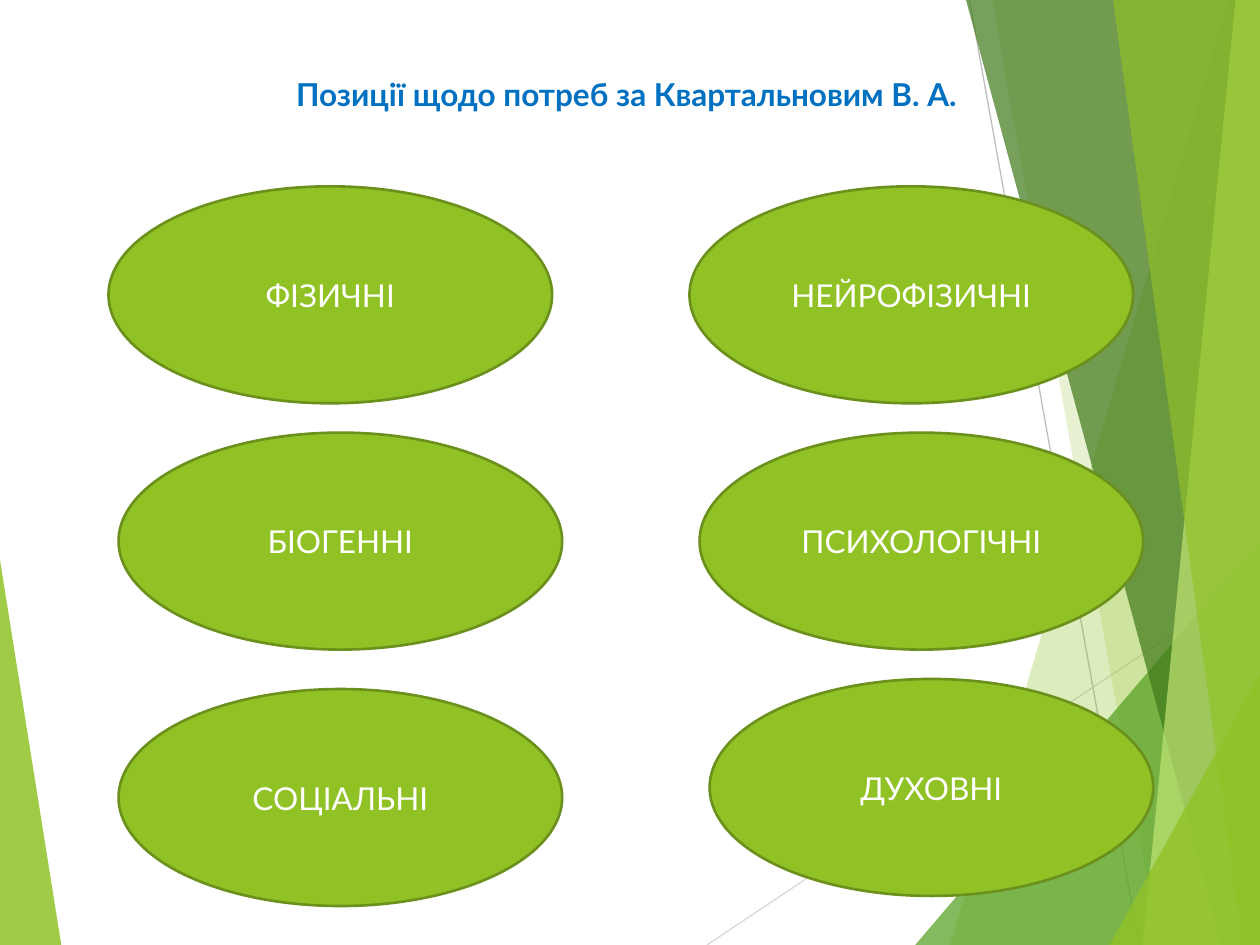
from pptx import Presentation
from pptx.dml.color import RGBColor
from pptx.enum.shapes import MSO_CONNECTOR, MSO_SHAPE
from pptx.enum.text import MSO_ANCHOR, PP_ALIGN
from pptx.oxml.ns import qn
from pptx.util import Pt
from lxml.etree import SubElement

WIDTH, HEIGHT = 720, 540
GREEN, DARK_GREEN, BLUE, WHITE = "90C226", "6B901C", "0070C0", "FFFFFF"


def color(hex_string):
    return RGBColor.from_string(hex_string)


def write_text(frame, text, hex_color, bold=False):
    frame.word_wrap = True
    frame.text = text
    paragraph = frame.paragraphs[0]
    paragraph.alignment = PP_ALIGN.CENTER
    font = paragraph.runs[0].font
    font.name, font.size, font.bold = "Lato", Pt(18), bold
    font.color.rgb = color(hex_color)


def add_facet(slide, points, hex_color, opacity):
    builder = slide.shapes.build_freeform(*points[0], scale=Pt(1))
    builder.add_line_segments(points[1:], close=True)
    facet = builder.convert_to_shape()
    facet.shadow.inherit = False
    facet.line.fill.background()
    facet.fill.solid()
    facet.fill.fore_color.rgb = color(hex_color)
    fill = facet.fill._xPr.find(qn("a:solidFill"))
    SubElement(fill[0], qn("a:alpha"), val=str(opacity * 1000))


def add_thin_line(slide, x1, y1, x2, y2, hex_color):
    line = slide.shapes.add_connector(
        MSO_CONNECTOR.STRAIGHT, Pt(x1), Pt(y1), Pt(x2), Pt(y2))
    line.line.color.rgb = color(hex_color)
    line.line.width = Pt(0.75)
    SubElement(line._element.spPr, qn("a:effectLst"))


def draw_left_wedge(slide, left, top, width, height):
    bottom = top + height
    add_facet(slide, [(left, top), (left + width, bottom), (left, bottom)], GREEN, 85)


def draw_right_wing(slide, left, top, width, height):
    right, bottom = left + width, top + height
    add_thin_line(slide, left + 4, bottom, right, top + 329, "D9D9D9")
    add_thin_line(slide, left + 154, top, left + 251, bottom, "BFBFBF")

    # Each facet runs to the right edge: upper x, upper y, lower x, colour, opacity
    facets = [
        (302, 0, 143, GREEN, 30),
        (167, 0, 262, GREEN, 20),
        (width, 309, 123, "54A021", 72),
        (152, 0, 298, "3F7819", 70),
        (306, 0, 253, "C0E474", 70),
        (236, 0, 310, GREEN, 65),
        (width, 385, 234, GREEN, 80),
    ]
    for upper_x, upper_y, lower_x, hex_color, opacity in facets:
        outline = [(left + upper_x, top + upper_y), (left + lower_x, bottom),
                   (right, bottom), (right, top + upper_y)]
        add_facet(slide, outline, hex_color, opacity)


def draw_title(slide, left, top, width, height):
    title = slide.shapes.add_textbox(Pt(left), Pt(top), Pt(width), Pt(height))
    write_text(title.text_frame, "Позиції щодо потреб за Квартальновим В. А.", BLUE, bold=True)


def draw_needs(slide, left, top, width, height):
    oval_width, oval_height = 253.5, 124
    right_column = width - oval_width
    row_step = (height - oval_height) / 2
    # Name, x and y inside the box
    needs = [
        ("ФІЗИЧНІ", 0, 0),
        ("НЕЙРОФІЗИЧНІ", right_column - 11.5, 0),
        ("БІОГЕННІ", 5.75, row_step),
        ("ДУХОВНІ", right_column, 2 * row_step),
        ("СОЦІАЛЬНІ", 5.75, 2 * row_step + 5.75),
        ("ПСИХОЛОГІЧНІ", right_column - 5.75, row_step),
    ]
    for name, x, y in needs:
        need = slide.shapes.add_shape(
            MSO_SHAPE.OVAL, Pt(left + x), Pt(top + y), Pt(oval_width), Pt(oval_height))
        need.shadow.inherit = False
        need.fill.solid()
        need.fill.fore_color.rgb = color(GREEN)
        need.line.color.rgb = color(DARK_GREEN)
        need.line.width = Pt(1.5)
        need.text_frame.vertical_anchor = MSO_ANCHOR.MIDDLE
        write_text(need.text_frame, name, WHITE)


def main():
    presentation = Presentation()
    presentation.slide_width, presentation.slide_height = Pt(WIDTH), Pt(HEIGHT)
    slide = presentation.slides.add_slide(presentation.slide_layouts[6])

    # Background facets
    draw_left_wedge(slide, 0, 320, 35, HEIGHT - 320)
    draw_right_wing(slide, 400, 0, WIDTH - 400, HEIGHT)

    # Content
    draw_title(slide, 34, 39.5, 648, 30)
    draw_needs(slide, 62, 106.5, 597, 405.5)

    presentation.save("out.pptx")


if __name__ == "__main__":
    main()
